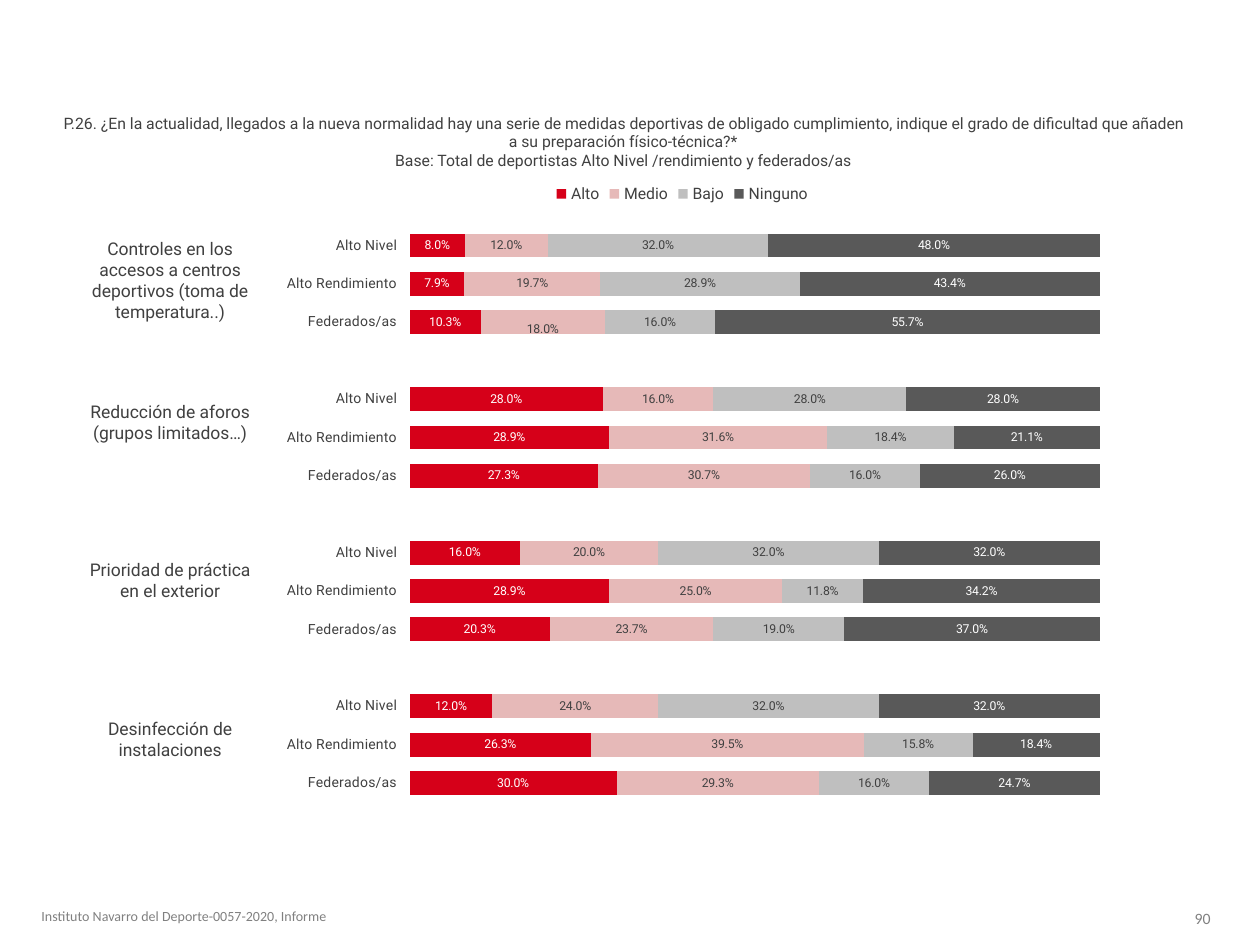
from lxml import etree
from pptx import Presentation
from pptx.chart.data import CategoryChartData
from pptx.dml.color import RGBColor
from pptx.enum import chart as ch, text as tx
from pptx.oxml.ns import qn
from pptx.util import Pt

INK, WHITE, GREY = "404040", "FFFFFF", "808080"
GROUPS = ["Alto Nivel", "Alto Rendimiento", "Federados/as"]
LEVELS = [  # name, fill, label colour, number format, values by topic
    ("Alto", "D60019", WHITE, "###0.0%",
     [(.08, .079, .103), (.28, .289, .273), (.16, .289, .203), (.12, .263, .3)]),
    ("Medio", "E6B9B8", INK, "0.0%",
     [(.12, .197, .18), (.16, .316, .307), (.2, .25, .237), (.24, .395, .293)]),
    ("Bajo", "BFBFBF", INK, "###0.0%",
     [(.32, .289, .16), (.28, .184, .16), (.32, .118, .19), (.32, .158, .16)]),
    ("Ninguno", "595959", WHITE, "###0.0%",
     [(.48, .434, .557), (.28, .211, .26), (.32, .342, .37), (.32, .184, .247)]),
]
TOPICS = [  # top, height, wording
    (132.5, 55.4, "Controles en los accesos a centros deportivos (toma de temperatura..)"),
    (225.4, 31.7, "Reducción de aforos (grupos limitados…)"),
    (316.1, 31.7, "Prioridad de práctica en el exterior"),
    (406.8, 31.7, "Desinfección de instalaciones"),
]
QUESTION = [
    "P.26. ¿En la actualidad, llegados a la nueva normalidad hay una serie de medidas "
    "deportivas de obligado cumplimiento, indique el grado de dificultad que añaden "
    "a su preparación físico-técnica?*",
    "Base: Total de deportistas Alto Nivel /rendimiento y federados/as",
]


def color(code):
    return RGBColor.from_string(code)


def style(font, size, code=INK, name="Roboto"):
    font.size, font.name = Pt(size), name
    font.color.rgb = color(code)


def add_text(slide, box, lines, size, code=INK, name="Roboto",
             align=tx.PP_ALIGN.CENTER, left=7.2):
    frame = slide.shapes.add_textbox(*map(Pt, box)).text_frame
    frame.word_wrap = True
    frame.margin_left = Pt(left)
    for i, line in enumerate(lines):
        para = frame.add_paragraph() if i else frame.paragraphs[0]
        para.alignment = align
        run = para.add_run()
        run.text = line
        style(run.font, size, code, name)
    return frame


def place(parent, spot, **parts):
    """Give a chart part a manual layout, inserted at child index spot."""
    for old in parent.findall(qn("c:layout")):
        parent.remove(old)
    layout = etree.Element(qn("c:layout"))
    manual = etree.SubElement(layout, qn("c:manualLayout"))
    for tag, val in parts.items():
        etree.SubElement(manual, qn("c:" + tag)).set("val", str(val))
    parent.insert(spot, layout)


def spread(topics, gap):
    """Join the topics into one list, with a gap between them."""
    flat = []
    for topic in topics:
        flat += [*topic, gap]
    return flat[:-1]


def add_bars(slide, box):
    data = CategoryChartData(number_format="0.0%")
    data.categories = spread([GROUPS] * len(TOPICS), "")
    for name, _, _, _, vals in LEVELS:
        data.add_series(name, spread(vals, None))
    chart = slide.shapes.add_chart(
        ch.XL_CHART_TYPE.BAR_STACKED_100, *map(Pt, box), data).chart
    style(chart.font, 9)
    chart.has_title = False
    plot = chart.plots[0]
    plot.gap_width, plot.overlap, plot.vary_by_categories = 61, 100, False
    for bars, (_, fill, ink, fmt, _) in zip(plot.series, LEVELS):
        bars.format.fill.solid()
        bars.format.fill.fore_color.rgb = color(fill)
        tags = bars.data_labels
        tags.show_value = True
        tags.number_format, tags.number_format_is_linked = fmt, False
        style(tags.font, 7, ink)

    # One label sits slightly below the middle of its bar
    low = plot.series[1]
    style(low.points[2].data_label.font, 7)
    tag = low.data_labels._element.find(qn("c:dLbl"))
    place(tag, 1, x=0, y=0.01)

    cats, vals = chart.category_axis, chart.value_axis
    cats.reverse_order = True
    cats.format.line.fill.background()
    cats.major_tick_mark = ch.XL_TICK_MARK.OUTSIDE
    style(cats.tick_labels.font, 8)
    vals.visible = vals.has_major_gridlines = False
    vals.minimum_scale, vals.maximum_scale, vals.major_unit = 0, 1, 0.5

    chart.has_legend = True
    key = chart.legend
    key.position = ch.XL_LEGEND_POSITION.TOP
    key.include_in_layout = False
    style(key.font, 9)
    place(key._element, 1, xMode="edge", yMode="edge", x=0.36, y=0.02)
    area = chart._chartSpace.chart.plotArea
    place(area, 0, layoutTarget="inner", xMode="edge", yMode="edge",
          x=0.213, y=0.089, w=0.715, h=0.853)


def main():
    deck = Presentation()
    deck.slide_width, deck.slide_height = Pt(720), Pt(540)
    slide = deck.slides.add_slide(deck.slide_layouts[6])
    add_text(slide, (16.6, 514.8, 229.7, 17.3),
             ["Instituto Navarro del Deporte-0057-2020, Informe"],
             8, GREY, "Calibri", tx.PP_ALIGN.LEFT)
    page = add_text(slide, (663.1, 515.5, 48.2, 18), ["90"], 9, GREY, "Calibri")
    page.vertical_anchor = tx.MSO_ANCHOR.MIDDLE
    add_bars(slide, (116.6, 95, 551.5, 385.9))
    add_text(slide, (31.7, 61.2, 653, 40.3), QUESTION, 9, left=2.9)
    for top, high, words in TOPICS:
        add_text(slide, (43.2, top, 108, high), [words], 10)
    deck.save("out.pptx")


if __name__ == "__main__":
    main()
